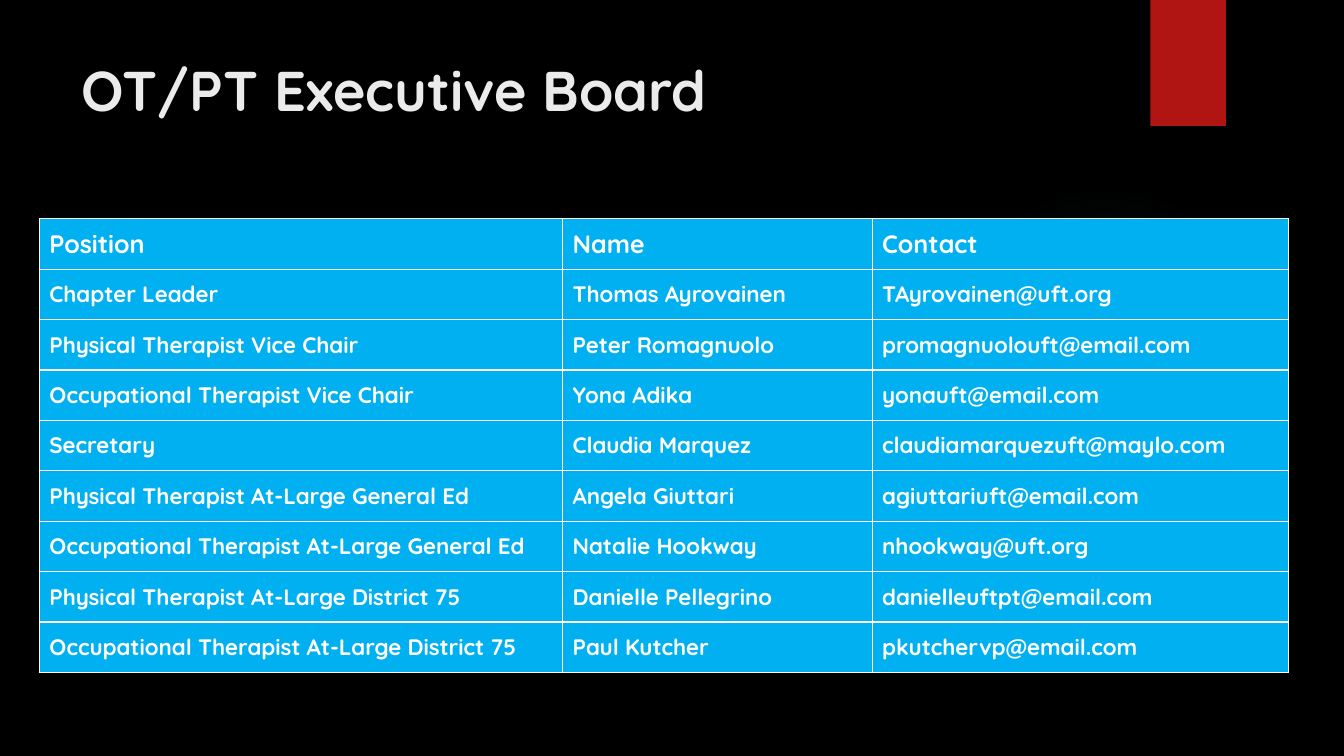
import pptx
import pptx.dml.color
import pptx.enum.shapes
import pptx.enum.text
import pptx.oxml
import pptx.oxml.ns
import pptx.util

Inches = pptx.util.Inches
Shapes = pptx.enum.shapes.MSO_SHAPE
Anchor = pptx.enum.text.MSO_ANCHOR

COLORS = {
    "background": "000000",
    "glow": "50B9C1",
    "ribbon": "B01513",
    "title": "EBEBEB",
    "cell": "00B0F0",
    "white": "FFFFFF",
}
COLUMN_WIDTHS = [5.19, 3.07, 4.13]
ROW_HEIGHT = 0.5
BOARD = [
    ("Position", "Name", "Contact"),
    ("Chapter Leader", "Thomas Ayrovainen", "TAyrovainen@uft.org"),
    ("Physical Therapist Vice Chair", "Peter Romagnuolo", "promagnuolouft@email.com"),
    ("Occupational Therapist Vice Chair", "Yona Adika", "yonauft@email.com"),
    ("Secretary", "Claudia Marquez", "claudiamarquezuft@maylo.com"),
    ("Physical Therapist At-Large General Ed", "Angela Giuttari", "agiuttariuft@email.com"),
    ("Occupational Therapist At-Large General Ed", "Natalie Hookway", "nhookway@uft.org"),
    ("Physical Therapist At-Large District 75", "Danielle Pellegrino", "danielleuftpt@email.com"),
    ("Occupational Therapist At-Large District 75", "Paul Kutcher", "pkutchervp@email.com"),
]


def rgb(color):
    return pptx.dml.color.RGBColor.from_string(COLORS[color])


class SlideBuilder:
    font_name = "Quicksand"

    def __init__(self, slide):
        self.slide = slide

    def background(self, color):
        fill = self.slide.background.fill
        fill.solid()
        fill.fore_color.rgb = rgb(color)

    def shape(self, kind, left, top, width, height, color):
        shape = self.slide.shapes.add_shape(
            kind, Inches(left), Inches(top), Inches(width), Inches(height))
        shape.shadow.inherit = False
        shape.line.fill.background()
        shape.fill.solid()
        shape.fill.fore_color.rgb = rgb(color)
        return shape

    def glow(self, left, top, size, color, stops):
        """Circle fading outwards; stops are (position, opacity) in percent."""
        shape = self.shape(Shapes.OVAL, left, top, size, size, color)
        stop_xml = "".join(
            f'<a:gs pos="{position * 1000}"><a:srgbClr val="{COLORS[color]}">'
            f'<a:alpha val="{opacity * 1000}"/></a:srgbClr></a:gs>'
            for position, opacity in stops)
        gradient = pptx.oxml.parse_xml(
            f'<a:gradFill {pptx.oxml.ns.nsdecls("a")}><a:gsLst>{stop_xml}</a:gsLst>'
            '<a:path path="circle"><a:fillToRect l="50000" t="50000" r="50000" b="50000"/>'
            '</a:path></a:gradFill>')
        properties = shape.element.spPr
        solid = properties.find(pptx.oxml.ns.qn("a:solidFill"))
        properties.replace(solid, gradient)

    def add_run(self, text_frame, text, size, color):
        run = text_frame.paragraphs[0].add_run()
        run.text = text
        run.font.name = self.font_name
        run.font.size = pptx.util.Pt(size)
        run.font.bold = True
        run.font.color.rgb = rgb(color)

    def text(self, left, top, width, height, text, size, color):
        box = self.slide.shapes.add_textbox(
            Inches(left), Inches(top), Inches(width), Inches(height))
        box.text_frame.word_wrap = True
        self.add_run(box.text_frame, text, size, color)

    def cell_borders(self, cell, color, width):
        properties = cell._tc.get_or_add_tcPr()
        for side in ("lnL", "lnR", "lnT", "lnB"):
            properties.append(pptx.oxml.parse_xml(
                f'<a:{side} {pptx.oxml.ns.nsdecls("a")} w="{pptx.util.Pt(width)}">'
                f'<a:solidFill><a:srgbClr val="{COLORS[color]}"/></a:solidFill></a:{side}>'))

    def table(self, left, top, rows, column_widths, row_height):
        table = self.slide.shapes.add_table(
            len(rows), len(column_widths), Inches(left), Inches(top),
            Inches(sum(column_widths)), Inches(row_height * len(rows))).table
        table.horz_banding = False
        for column, width in zip(table.columns, column_widths):
            column.width = Inches(width)
        for row_index, row in enumerate(rows):
            table.rows[row_index].height = Inches(row_height)
            for column_index, text in enumerate(row):
                cell = table.cell(row_index, column_index)
                self.cell_borders(cell, "white", 1)
                cell.fill.solid()
                cell.fill.fore_color.rgb = rgb("cell")
                cell.vertical_anchor = Anchor.MIDDLE
                self.add_run(cell.text_frame, text, 16 if row_index else 18, "white")


def main():
    presentation = pptx.Presentation()
    presentation.slide_width = Inches(13.33)
    presentation.slide_height = Inches(7.5)
    builder = SlideBuilder(presentation.slides.add_slide(presentation.slide_layouts[6]))
    builder.background("background")
    builder.glow(9.41, 1.83, 3.08, "glow", [(0, 7), (36, 6), (69, 0)])
    builder.shape(Shapes.RECTANGLE, 11.41, 0, 0.75, 1.25, "ribbon")
    builder.text(0.71, 0.5, 10.29, 1.53, "OT/PT Executive Board", 40, "title")
    builder.table(0.39, 2.17, BOARD, COLUMN_WIDTHS, ROW_HEIGHT)
    presentation.save("out.pptx")


if __name__ == "__main__":
    main()
